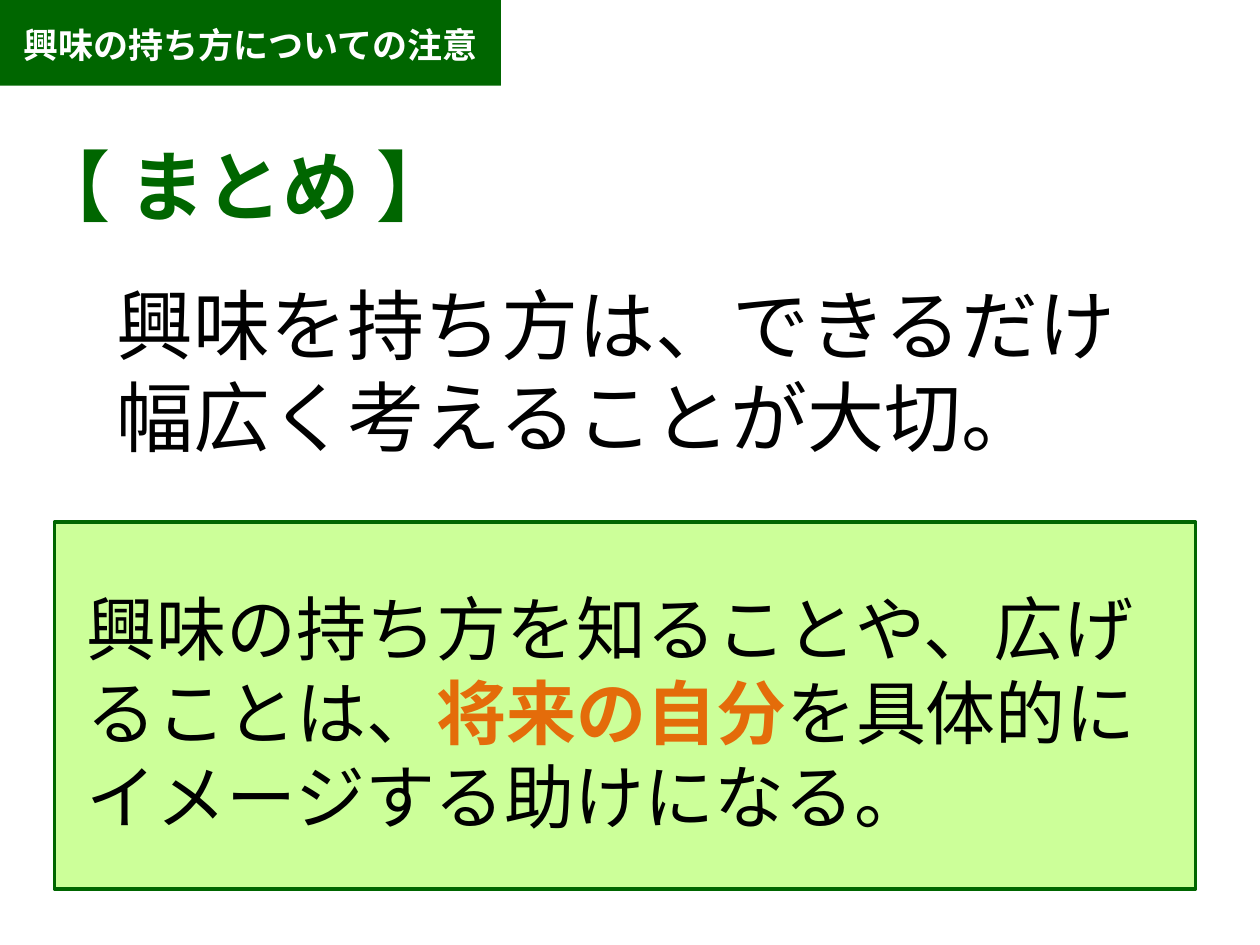
from pptx import Presentation
from pptx.dml.color import RGBColor
from pptx.enum.shapes import MSO_SHAPE as Shape
from pptx.enum.text import MSO_ANCHOR as Anchor, PP_ALIGN as Align
from pptx.oxml.ns import qn
from pptx.util import Cm, Pt
from lxml.etree import SubElement

# Content: a paragraph is a list of (text, role) runs
BANNER = [[("興味の持ち方についての注意", "banner")]]
HEADING = [[("【 まとめ 】", "heading")]]
MESSAGE = [
    [("興味を持ち方は、できるだけ", "message")],
    [("幅広く考えることが大切。", "message")],
]
CONCLUSION = [[
    ("興味の持ち方を知ることや、広げることは、", "conclusion"),
    ("将来の自分", "emphasis"),
    ("を具体的にイメージする助けになる。", "conclusion"),
]]

THEME = {
    "font": "Noto Sans CJK JP",
    "green": "006600",
    "pale": "CCFF99",
    "leading": 1.2,   # line pitch, in type sizes
    "drop": 0.1,      # extra top inset, in type sizes
    "roles": {        # size, colour, bold
        "banner": (20, "FFFFFF", True),
        "heading": (44, "006600", True),
        "message": (44, "000000", False),
        "conclusion": (40, "000000", False),
        "emphasis": (40, "E46C0A", True),
    },
}


def rgb(code):
    return RGBColor.from_string(code)


def write(holder, paragraphs, align=Align.LEFT, anchor=Anchor.TOP, wrap=True):
    frame = holder.text_frame
    frame.word_wrap, frame.vertical_anchor = wrap, anchor
    size = THEME["roles"][paragraphs[0][0][1]][0]
    frame.margin_top = Cm(0.13) + Pt(size * THEME["drop"])
    for number, runs in enumerate(paragraphs):
        line = frame.add_paragraph() if number else frame.paragraphs[0]
        line.alignment = align
        line.line_spacing = Pt(size * THEME["leading"])
        for words, role in runs:
            run = line.add_run()
            run.text = words
            points, colour, bold = THEME["roles"][role]
            run.font.size, run.font.bold = Pt(points), bold
            run.font.color.rgb = rgb(colour)
            run.font.name = THEME["font"]
            east_asian = SubElement(run.font._element, qn("a:ea"))
            east_asian.set("typeface", THEME["font"])


def panel(place, fill, border=None):
    shape = slide.shapes.add_shape(Shape.RECTANGLE, *map(Cm, place))
    shape.shadow.inherit = False
    shape.fill.solid()
    shape.fill.fore_color.rgb = rgb(fill)
    if border:
        shape.line.color.rgb = rgb(border)
        shape.line.width = Pt(2)
    else:
        shape.line.fill.background()
    return shape


def text_box(place):
    return slide.shapes.add_textbox(*map(Cm, place))


deck = Presentation()
deck.slide_width, deck.slide_height = Cm(25.4), Cm(19.05)
slide = deck.slides.add_slide(deck.slide_layouts[6])

# Message and heading
write(text_box((2.1, 5.3, 22.8, 4)), MESSAGE)
write(text_box((0.43, 2.5, 9.43, 2.13)), HEADING, wrap=False)

# Framed conclusion
panel((1.1, 10.52, 23, 7.4), THEME["pale"], THEME["green"])
write(text_box((1.5, 11.53, 22.2, 5.4)), CONCLUSION)

# Banner in the top left corner
banner = panel((0, 0, 10.1, 1.73), THEME["green"])
write(banner, BANNER, align=Align.CENTER, anchor=Anchor.MIDDLE)

deck.save("out.pptx")
